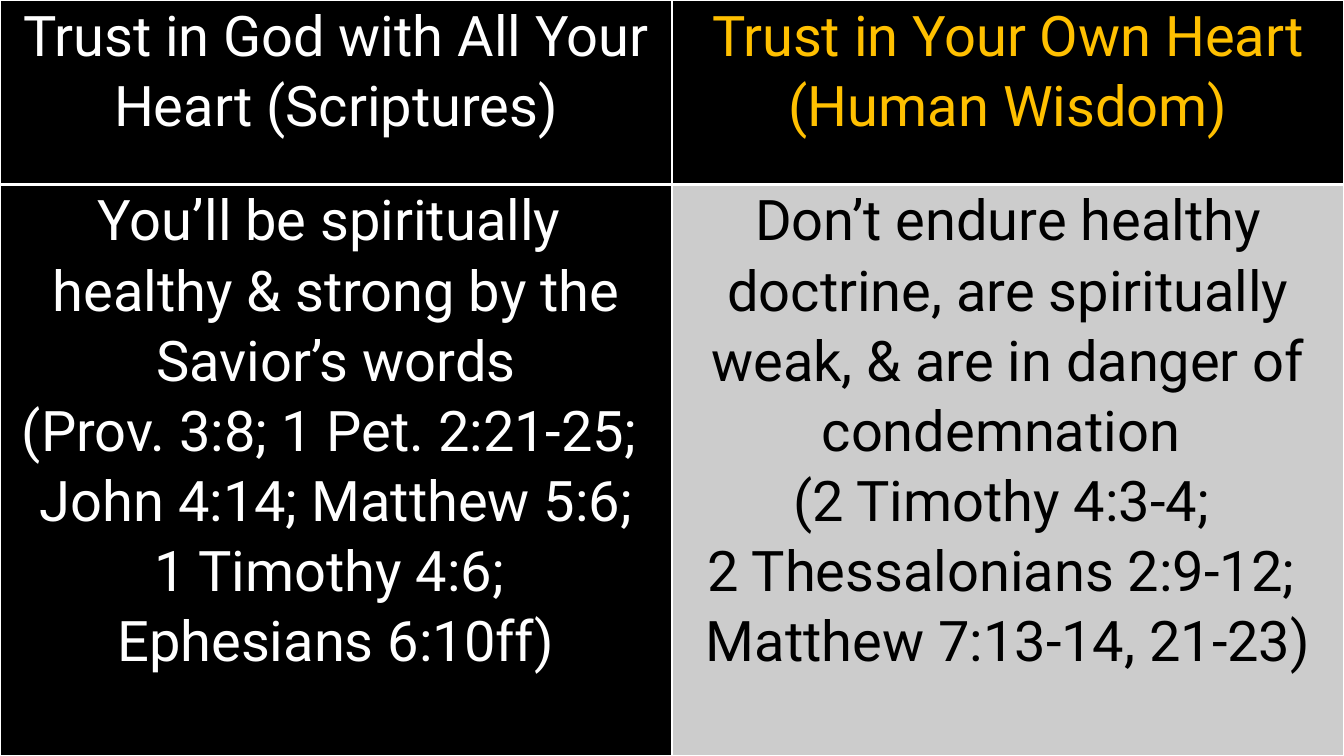
import dataclasses

import lxml.etree
import pptx
import pptx.dml.color
import pptx.enum.text
import pptx.oxml.ns
import pptx.util


@dataclasses.dataclass(frozen=True)
class Theme:
    font: str = "Roboto"
    text_size: int = 40
    line_spacing: float = 1.07
    black: str = "000000"
    white: str = "FFFFFF"
    gold: str = "FFC000"
    gray: str = "CCCCCC"
    thin_border: int = 1
    header_border: int = 3
    side_margin: float = 0.07


THEME = Theme()
SLIDE_WIDTH, SLIDE_HEIGHT = 13.33, 7.5
COLUMN_SHARES = (0.5, 0.5)
HEADER_SHARE = 1.83 / SLIDE_HEIGHT
ROW_SHARES = (HEADER_SHARE, 1 - HEADER_SHARE)

# Each cell: paragraphs, text colour, fill colour
COMPARISON = [
    [
        (["Trust in God with All Your Heart (Scriptures)"], THEME.white, THEME.black),
        (["Trust in Your Own Heart (Human Wisdom)"], THEME.gold, THEME.black),
    ],
    [
        (
            [
                "You’ll be spiritually ",
                "healthy & strong by the",
                "Savior’s words",
                "(Prov. 3:8; 1 Pet. 2:21-25; ",
                "John 4:14; Matthew 5:6;",
                "1 Timothy 4:6; ",
                "Ephesians 6:10ff)",
            ],
            THEME.white,
            THEME.black,
        ),
        (
            [
                "Don’t endure healthy doctrine, are spiritually weak, "
                "& are in danger of condemnation ",
                "(2 Timothy 4:3-4; ",
                "2 Thessalonians 2:9-12; ",
                "Matthew 7:13-14, 21-23)",
            ],
            THEME.black,
            THEME.gray,
        ),
    ],
]


def rgb(color):
    return pptx.dml.color.RGBColor.from_string(color)


def paint(fill, color):
    fill.solid()
    fill.fore_color.rgb = rgb(color)


def set_borders(cell, widths):
    """Draw white cell borders; widths maps L, R, T, B to points, in that order."""
    qn = pptx.oxml.ns.qn
    properties = cell._tc.get_or_add_tcPr()
    for position, (side, width) in enumerate(widths.items()):
        line = lxml.etree.Element(qn(f"a:ln{side}"), w=str(pptx.util.Pt(width)))
        solid = lxml.etree.SubElement(line, qn("a:solidFill"))
        lxml.etree.SubElement(solid, qn("a:srgbClr"), val=THEME.white)
        properties.insert(position, line)


def write_paragraphs(text_frame, texts, color):
    for index, text in enumerate(texts):
        paragraph = text_frame.add_paragraph() if index else text_frame.paragraphs[0]
        paragraph.alignment = pptx.enum.text.PP_ALIGN.CENTER
        paragraph.line_spacing = THEME.line_spacing
        run = paragraph.add_run()
        run.text = text
        run.font.name = THEME.font
        run.font.size = pptx.util.Pt(THEME.text_size)
        run.font.bold = False
        run.font.color.rgb = rgb(color)


def format_cell(cell, content, is_header):
    texts, text_color, fill_color = content
    cell.margin_left = cell.margin_right = pptx.util.Inches(THEME.side_margin)
    cell.margin_top = cell.margin_bottom = 0
    paint(cell.fill, fill_color)
    thin, thick = THEME.thin_border, THEME.header_border
    top, bottom = (thin, thick) if is_header else (thick, thin)
    set_borders(cell, {"L": thin, "R": thin, "T": top, "B": bottom})
    write_paragraphs(cell.text_frame, texts, text_color)


def add_comparison_table(slide, width, height):
    """Fill the whole slide with the two-column comparison."""
    table = slide.shapes.add_table(
        len(ROW_SHARES), len(COLUMN_SHARES), 0, 0, width, height
    ).table
    for column, share in zip(table.columns, COLUMN_SHARES):
        column.width = int(width * share)
    for row, share in zip(table.rows, ROW_SHARES):
        row.height = int(height * share)
    for row_index, contents in enumerate(COMPARISON):
        for column_index, content in enumerate(contents):
            cell = table.cell(row_index, column_index)
            format_cell(cell, content, is_header=row_index == 0)


def main():
    presentation = pptx.Presentation()
    presentation.slide_width = pptx.util.Inches(SLIDE_WIDTH)
    presentation.slide_height = pptx.util.Inches(SLIDE_HEIGHT)
    blank_layout = presentation.slide_layouts.get_by_name("Blank")
    slide = presentation.slides.add_slide(blank_layout)
    paint(slide.background.fill, THEME.black)
    add_comparison_table(slide, presentation.slide_width, presentation.slide_height)
    presentation.save("out.pptx")


if __name__ == "__main__":
    main()
